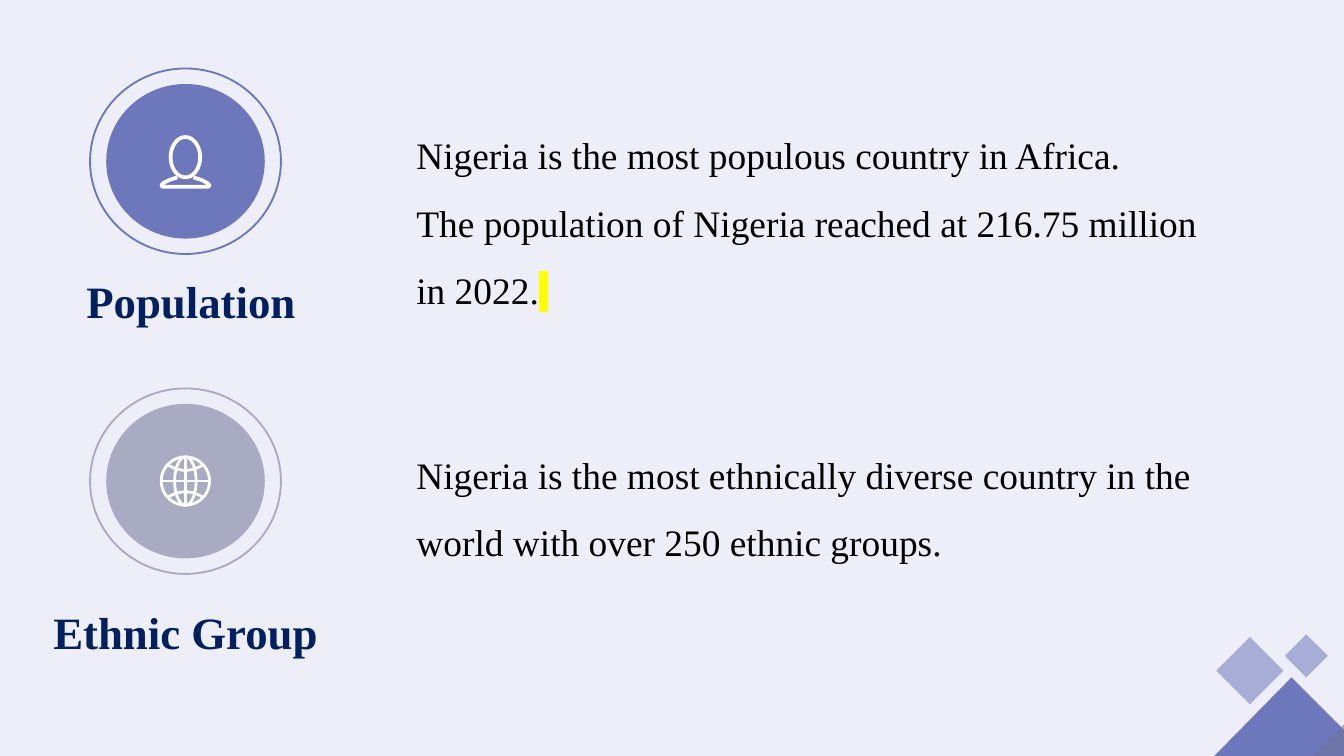
import math
import pptx
import pptx.util
import pptx.dml.color
import pptx.enum.shapes
import pptx.enum.text
import pptx.oxml.ns
from dataclasses import dataclass
from lxml import etree

Inches = pptx.util.Inches
Pt = pptx.util.Pt
RGB = pptx.dml.color.RGBColor.from_string
qn = pptx.oxml.ns.qn
OVAL = pptx.enum.shapes.MSO_SHAPE.OVAL
ALIGN = pptx.enum.text.PP_ALIGN


@dataclass
class Theme:
    background: str = "EDEEF7"
    accent: str = "6D77BB"
    slate: str = "6E7397"
    muted: str = "A8ABC1"
    icon: str = "FFFFFF"
    label: str = "002060"
    text: str = "000000"
    highlight: str = "FFFF00"
    font: str = "Times New Roman"
    label_size: int = 24
    text_size: int = 20


theme = Theme()
deck = pptx.Presentation()
deck.slide_width = Inches(10)
deck.slide_height = deck.slide_width * 9 // 16
slide = deck.slides.add_slide(deck.slide_layouts[6])
slide.background.fill.solid()
slide.background.fill.fore_color.rgb = RGB(theme.background)
shapes = slide.shapes


def paint(shape, fill=None, line=None, width=1, opacity=100):
    shape.shadow.inherit = False
    if fill:
        shape.fill.solid()
        shape.fill.fore_color.rgb = RGB(fill)
        if opacity < 100:
            color = shape.fill._xPr.find(qn("a:solidFill"))[0]
            etree.SubElement(color, qn("a:alpha")).set("val", str(opacity * 1000))
    else:
        shape.fill.background()
    if line:
        shape.line.color.rgb = RGB(line)
        shape.line.width = Pt(width)
    else:
        shape.line.fill.background()


def outline(closed_contours, open_contours=()):
    contours = [(points, True) for points in closed_contours]
    contours += [(points, False) for points in open_contours]
    builder = None
    for points, closed in contours:
        corners = [(Inches(x), Inches(y)) for x, y in points]
        if builder is None:
            builder = shapes.build_freeform(*corners[0])
        else:
            builder.move_to(*corners[0])
        builder.add_line_segments(corners[1:], close=closed)
    return builder.convert_to_shape()


large_peak = outline([[(9.61, 5.04), (10, 5.43), (10, 5.63), (9.03, 5.63)]])
paint(large_peak, theme.accent)
corner = outline([[(10, 5.39), (10, 5.63), (9.76, 5.63)]])
paint(corner, theme.slate, opacity=54)
for x, y, half in [(9.3, 4.99, 0.25), (9.72, 4.88, 0.16)]:
    diamond = outline([[(x, y - half), (x + half, y), (x, y + half), (x - half, y)]])
    paint(diamond, theme.accent, opacity=54)

center_x = 1.38
population_y, ethnic_y = 1.2, 3.58
for center_y, color in [(population_y, theme.accent), (ethnic_y, theme.muted)]:
    for width, height, fill, line in [(1.18, 1.15, color, None), (1.42, 1.38, None, color)]:
        badge = shapes.add_shape(OVAL, Inches(center_x - width / 2), Inches(center_y - height / 2),
                                 Inches(width), Inches(height))
        paint(badge, fill, line)

turn = [(math.cos(math.radians(angle)), math.sin(math.radians(angle))) for angle in range(0, 360, 10)]
left_shoulder = [(-0.06, 0.12), (-0.12, 0.14), (-0.16, 0.16), (-0.18, 0.18), (-0.17, 0.19)]
right_shoulder = [(-x, y) for x, y in reversed(left_shoulder)]
head = [(center_x + 0.11 * x, population_y - 0.03 + 0.15 * y) for x, y in turn]
shoulders = [(center_x + x, population_y + y) for x, y in left_shoulder + right_shoulder]
person = outline([head], [shoulders])
paint(person, line=theme.icon, width=2)

rings = [[(center_x + radius * x, ethnic_y + 0.18 * y) for x, y in turn] for radius in (0.18, 0.08)]
steps = [step / 6 for step in range(-6, 7)]
parallels = [[(center_x + 0.13 * t, ethnic_y + side * (0.08 + 0.04 * t * t)) for t in steps]
             for side in (-1, 1)]
axes = [[(center_x - dx, ethnic_y - dy), (center_x + dx, ethnic_y + dy)]
        for dx, dy in [(0.18, 0), (0, 0.18)]]
globe = outline(rings, parallels + axes)
paint(globe, line=theme.icon, width=1.5)

population_facts = [
    "Nigeria is the most populous country in Africa.",
    "The population of Nigeria reached at 216.75 million in 2022.",
]
ethnic_facts = ["Nigeria is the most ethnically diverse country in the world with over 250 ethnic groups."]
blocks = [
    (3, 0.77, 6.03, 1.61, population_facts, False),
    (0.13, 4.45, 2.5, 0.5, ["Ethnic Group"], True),
    (3, 3.15, 6.05, 1.11, ethnic_facts, False),
    (0.51, 1.99, 1.82, 0.5, ["Population"], True),
]
for left, top, width, height, lines, is_label in blocks:
    frame = shapes.add_textbox(Inches(left), Inches(top), Inches(width), Inches(height)).text_frame
    frame.word_wrap = True
    frame.auto_size = pptx.enum.text.MSO_AUTO_SIZE.SHAPE_TO_FIT_TEXT
    frame.text = "\n".join(lines)
    if lines is population_facts:
        marker = frame.paragraphs[-1].add_run()
        marker.text = " "
    for paragraph in frame.paragraphs:
        paragraph.alignment = ALIGN.CENTER if is_label else ALIGN.LEFT
        paragraph.line_spacing = 1.0 if is_label else 1.5
        for run in paragraph.runs:
            run.font.name = theme.font
            run.font.size = Pt(theme.label_size if is_label else theme.text_size)
            run.font.bold = is_label
            run.font.color.rgb = RGB(theme.label if is_label else theme.text)

highlight = etree.Element(qn("a:highlight"))
etree.SubElement(highlight, qn("a:srgbClr")).set("val", theme.highlight)
marker.font._element.find(qn("a:solidFill")).addnext(highlight)

deck.save("out.pptx")
